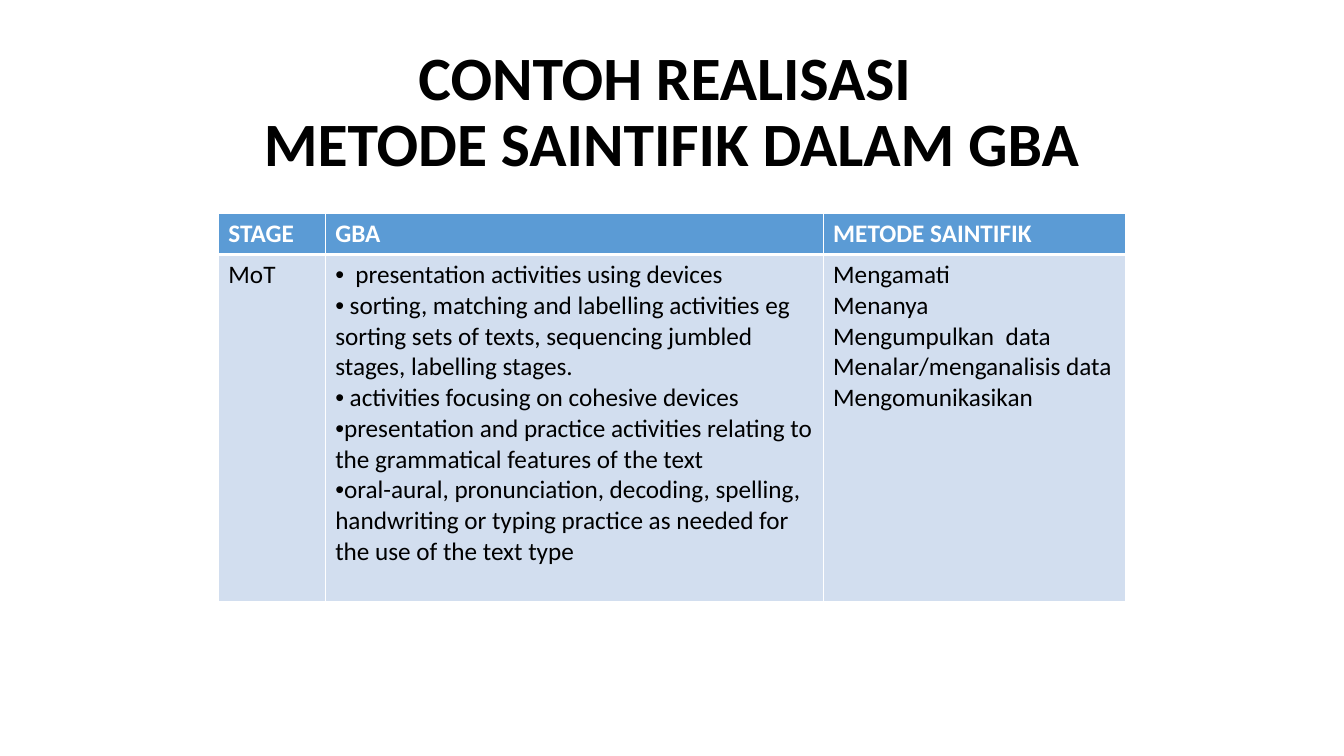
from lxml import etree
from pptx import Presentation
from pptx.dml.color import RGBColor
from pptx.enum.text import MSO_ANCHOR, MSO_AUTO_SIZE, PP_ALIGN
from pptx.oxml.ns import qn
from pptx.util import Pt

CENTER = PP_ALIGN.CENTER
MIDDLE = MSO_ANCHOR.MIDDLE
NO_AUTOFIT = MSO_AUTO_SIZE.NONE
BLACK = RGBColor(0x00, 0x00, 0x00)
WHITE = RGBColor(0xFF, 0xFF, 0xFF)
HEADER_BLUE = RGBColor(0x5B, 0x9B, 0xD5)
BODY_BLUE = RGBColor(0xD2, 0xDE, 0xEF)

TITLE = "CONTOH REALISASI \vMETODE SAINTIFIK DALAM GBA"
HEADINGS = ["STAGE", "GBA", "METODE SAINTIFIK"]
STAGE = "MoT"
ACTIVITIES = [
    "  presentation activities using devices",
    " sorting, matching and labelling activities eg sorting sets of texts, "
    "sequencing jumbled stages, labelling stages.",
    " activities focusing on cohesive devices",
    "presentation and practice activities relating to the grammatical "
    "features of the text",
    "oral-aural, pronunciation, decoding, spelling, handwriting or typing "
    "practice as needed for the use of the text type",
]
METHODS = ["Mengamati", "Menanya", "Mengumpulkan  data",
           "Menalar/menganalisis data", "Mengomunikasikan"]


class StageSlide:
    font = "Calibri"
    title_size = 44
    table_size = 18

    def __init__(self, prs):
        self.slide = prs.slides.add_slide(prs.slide_layouts[5])

    def style(self, paragraph, size, color, bold):
        for run in paragraph.runs:
            run.font.name = self.font
            run.font.size = Pt(size)
            run.font.color.rgb = color
            run.font.bold = bold

    def title(self, text, left, top, width, height):
        heading = self.slide.shapes.title
        heading.left, heading.top = Pt(left), Pt(top)
        heading.width, heading.height = Pt(width), Pt(height)
        frame = heading.text_frame
        frame.text = text
        frame.word_wrap = True
        frame.auto_size = NO_AUTOFIT
        frame.vertical_anchor = MIDDLE
        line = frame.paragraphs[0]
        line.alignment = CENTER
        line.line_spacing = 0.9
        self.style(line, self.title_size, BLACK, True)

    def table(self, left, top, widths, heights):
        table = self.slide.shapes.add_table(
            len(heights), len(widths), Pt(left), Pt(top),
            Pt(sum(widths)), Pt(sum(heights))).table
        table.horz_banding = False
        for column, width in zip(table.columns, widths):
            column.width = Pt(width)
        for row, height in zip(table.rows, heights):
            row.height = Pt(height)
        return table

    def borders(self, cell, widths):
        properties = cell._tc.get_or_add_tcPr()
        for side, width in zip("LRTB", widths):
            line = etree.SubElement(properties, qn(f"a:ln{side}"), w=str(Pt(width)))
            fill = etree.SubElement(line, qn("a:solidFill"))
            etree.SubElement(fill, qn("a:srgbClr"), val=str(WHITE))

    def bullet(self, paragraph):
        properties = paragraph._p.get_or_add_pPr()
        properties.set("marL", "0")
        properties.set("indent", "0")
        etree.SubElement(properties, qn("a:buFont"), typeface="Arial")
        etree.SubElement(properties, qn("a:buChar"), char="•")

    def cell(self, cell, lines, header=False, bulleted=False):
        # The rule between header and body is thicker than the others
        self.borders(cell, (1, 1, 1, 3) if header else (1, 1, 3, 1))
        cell.fill.solid()
        cell.fill.fore_color.rgb = HEADER_BLUE if header else BODY_BLUE
        cell.text_frame.text = "\n".join(lines)
        for paragraph in cell.text_frame.paragraphs:
            if bulleted:
                self.bullet(paragraph)
            self.style(paragraph, self.table_size,
                       WHITE if header else BLACK, header)


def main():
    prs = Presentation()
    prs.slide_width, prs.slide_height = Pt(960), Pt(540)
    page = StageSlide(prs)

    # Title
    page.title(TITLE, 66, 28.75, 828, 104.38)

    # Stage table
    stages = page.table(156, 152.64, [76.32, 355.68, 216], [29.2, 248])
    for column, heading in enumerate(HEADINGS):
        page.cell(stages.cell(0, column), [heading], header=True)
    for column, lines in enumerate([[STAGE], ACTIVITIES, METHODS]):
        page.cell(stages.cell(1, column), lines, bulleted=lines is ACTIVITIES)

    prs.save("out.pptx")


if __name__ == "__main__":
    main()
